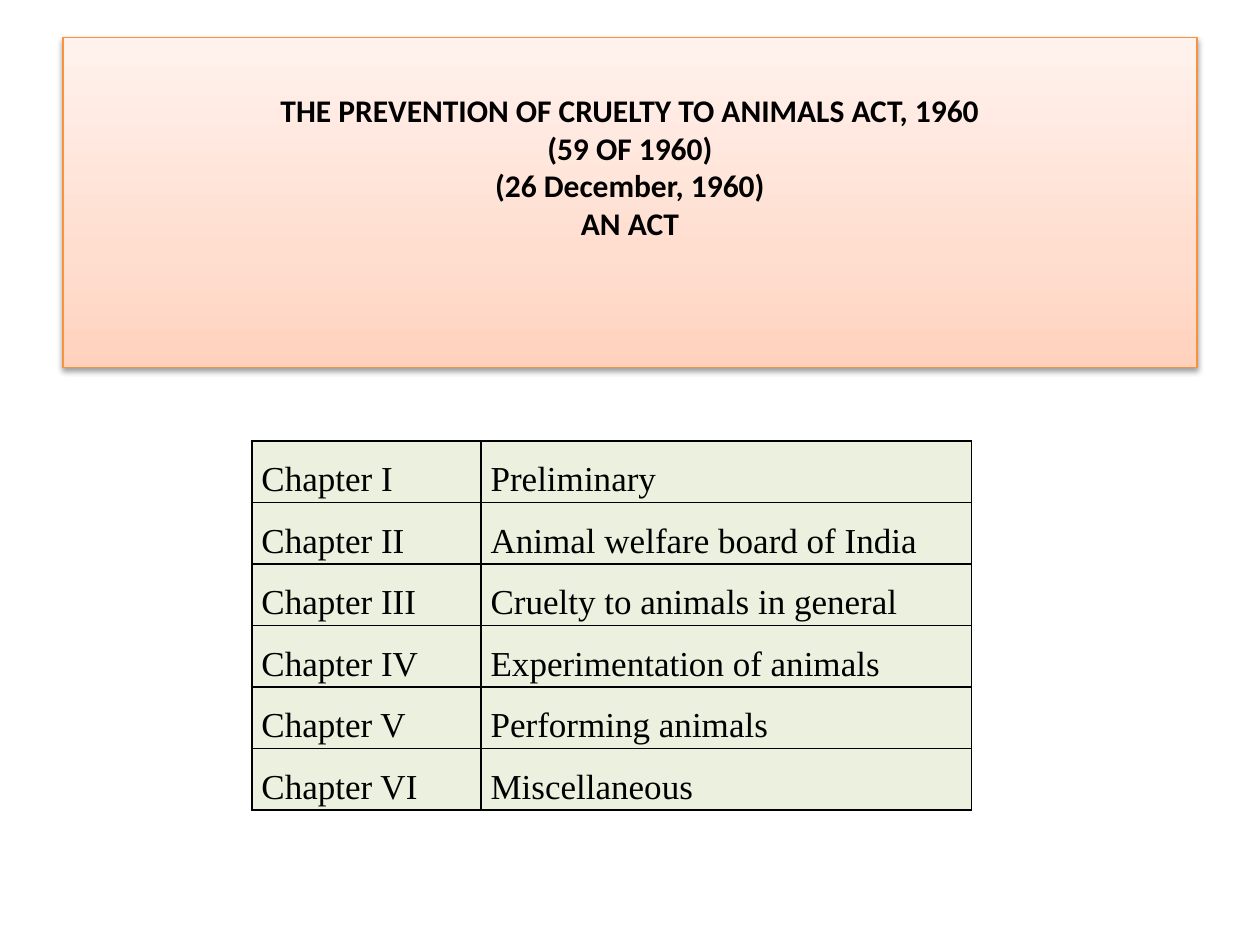
from dataclasses import dataclass

import pptx
import pptx.dml.color
import pptx.enum.shapes
import pptx.enum.text
import pptx.oxml
import pptx.oxml.ns
import pptx.util
from pptx.util import Cm

ALIGN = pptx.enum.text.PP_ALIGN
DRAWING_NS = pptx.oxml.ns.nsdecls("a")
BLACK = "000000"


@dataclass
class Chapter:
    number: str
    title: str


TITLE_LINES = [
    "THE PREVENTION OF CRUELTY TO ANIMALS ACT, 1960",
    "(59 OF 1960)",
    "(26 December, 1960)",
    "AN ACT",
]
BANNER_STOPS = [(0, "FFD2BD"), (35, "FFDED0"), (100, "FFF2ED")]
CHAPTERS = [
    Chapter("Chapter I", "Preliminary"),
    Chapter("Chapter II", "Animal welfare board of India"),
    Chapter("Chapter III", "Cruelty to animals in general"),
    Chapter("Chapter IV", "Experimentation of animals"),
    Chapter("Chapter V", "Performing animals"),
    Chapter("Chapter VI", "Miscellaneous"),
]
COLUMN_WIDTHS = [Cm(4.62), Cm(9.88)]
ROW_HEIGHT = Cm(1.24)


def color(value: str) -> pptx.dml.color.RGBColor:
    return pptx.dml.color.RGBColor.from_string(value)


def write_text(text_frame, text: str, *, font: str, size: float, bold=False,
               align=ALIGN.LEFT, line_spacing=1.0) -> None:
    paragraph = text_frame.paragraphs[0]
    paragraph.text = text
    paragraph.alignment = align
    paragraph.line_spacing = line_spacing
    for run in paragraph.runs:
        run.font.name = font
        run.font.size = pptx.util.Pt(size)
        run.font.bold = bold
        run.font.color.rgb = color(BLACK)


def fill_gradient(shape, stops) -> None:
    """Fill from bottom to top."""
    stop_xml = "".join(
        f'<a:gs pos="{position * 1000}"><a:srgbClr val="{value}"/></a:gs>'
        for position, value in stops)
    gradient = pptx.oxml.parse_xml(
        f'<a:gradFill {DRAWING_NS} rotWithShape="1"><a:gsLst>{stop_xml}</a:gsLst>'
        '<a:lin ang="16200000" scaled="0"/></a:gradFill>')
    shape.element.spPr.find(pptx.oxml.ns.qn("a:prstGeom")).addnext(gradient)


def add_shadow(shape) -> None:
    shape.element.spPr.append(pptx.oxml.parse_xml(
        f'<a:effectLst {DRAWING_NS}>'
        '<a:outerShdw blurRad="40000" dist="20000" dir="5400000" rotWithShape="0">'
        f'<a:srgbClr val="{BLACK}"><a:alpha val="38000"/></a:srgbClr>'
        '</a:outerShdw></a:effectLst>'))


def add_banner(slide) -> None:
    shape = slide.shapes.add_shape(
        pptx.enum.shapes.MSO_SHAPE.RECTANGLE, Cm(1.27), Cm(0.76), Cm(22.86), Cm(6.65))
    fill_gradient(shape, BANNER_STOPS)
    shape.line.color.rgb = color("F69240")
    shape.line.width = pptx.util.Pt(0.75)
    add_shadow(shape)
    text_frame = shape.text_frame
    text_frame.word_wrap = True
    text_frame.vertical_anchor = pptx.enum.text.MSO_ANCHOR.TOP
    text_frame.margin_top = Cm(1.07)
    write_text(text_frame, "\v".join(TITLE_LINES), font="Calibri", size=18,
               bold=True, align=ALIGN.CENTER)


def add_borders(cell) -> None:
    properties = cell._tc.get_or_add_tcPr()
    for index, side in enumerate(("lnL", "lnR", "lnT", "lnB")):
        properties.insert(index, pptx.oxml.parse_xml(
            f'<a:{side} {DRAWING_NS} w="12700"><a:solidFill>'
            f'<a:srgbClr val="{BLACK}"/></a:solidFill></a:{side}>'))


def format_cell(cell, text: str, align) -> None:
    cell.margin_left = cell.margin_right = Cm(0.19)
    cell.margin_top = cell.margin_bottom = 0
    cell.fill.solid()
    cell.fill.fore_color.rgb = color("EBF1DE")
    add_borders(cell)
    write_text(cell.text_frame, text, font="Times New Roman", size=20,
               align=align, line_spacing=1.5)


def add_chapter_table(slide) -> None:
    table = slide.shapes.add_table(
        len(CHAPTERS), len(COLUMN_WIDTHS), Cm(5.08), Cm(8.89),
        sum(COLUMN_WIDTHS), ROW_HEIGHT * len(CHAPTERS)).table
    table.first_row = table.horz_banding = False
    for column, width in zip(table.columns, COLUMN_WIDTHS):
        column.width = width
    for index, chapter in enumerate(CHAPTERS):
        table.rows[index].height = ROW_HEIGHT
        format_cell(table.cell(index, 0), chapter.number, ALIGN.LEFT)
        format_cell(table.cell(index, 1), chapter.title, ALIGN.JUSTIFY)


def main() -> None:
    presentation = pptx.Presentation()
    presentation.slide_width = Cm(25.4)
    presentation.slide_height = Cm(19.05)
    slide = presentation.slides.add_slide(presentation.slide_layouts[6])

    # Title banner
    add_banner(slide)
    # Chapters of the act
    add_chapter_table(slide)

    presentation.save("out.pptx")


if __name__ == "__main__":
    main()
